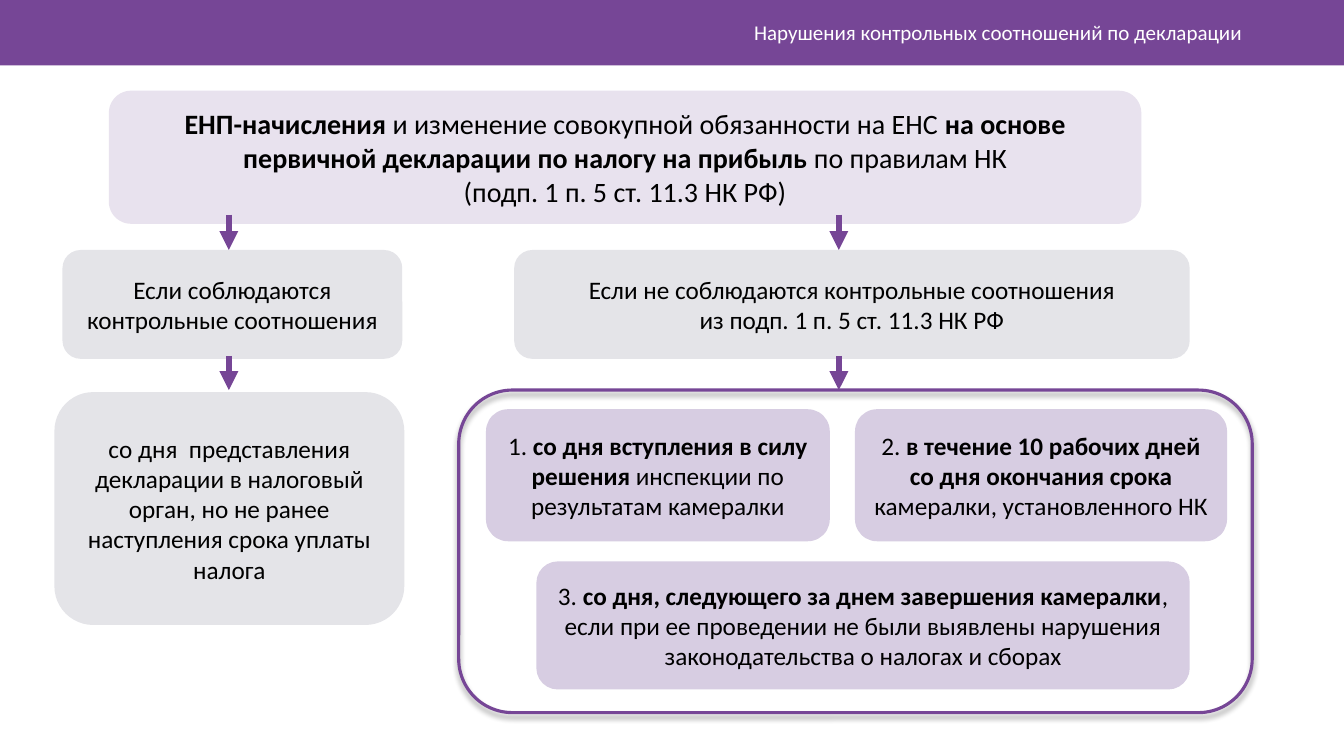
from pptx import Presentation, util as u
from pptx.dml.color import RGBColor
from pptx.enum import shapes as sh, text as tx
from pptx.oxml import parse_xml
from pptx.oxml.ns import nsdecls

THEME = {
    "font": "Calibri", "dark": "764696", "grey": "E4E4E8", "pale": "E8E2EE",
    "lilac": "D7CDE2", "ink": "000000", "white": "FFFFFF",
    "head": 15, "lead": 20, "body": 18, "arrow": 4.5, "edge": 2.25,
}
SIZE = (13.33, 7.5)
BAND = 0.65
TITLE = "Нарушения контрольных соотношений по декларации"

ROWS = {"lead": (0.9, 1.32), "case": (2.48, 1.08), "term": (3.89, 2.31),
        "frame": (3.87, 3.2), "pair": (4.06, 1.31), "last": (5.57, 1.27)}
COLS = {"lead": (1.08, 10.24), "yes": (0.62, 3.37), "no": (5.1, 6.7),
        "term": (0.54, 3.47), "frame": (4.55, 7.87), "one": (4.82, 3.41),
        "two": (8.48, 3.69), "three": (5.32, 6.48)}

BOXES = [
    ("lead", "lead", "pale", "lead", [
        "*ЕНП-начисления* и изменение совокупной обязанности на ЕНС "
        "*на основе первичной декларации по налогу на прибыль *по правилам НК",
        "(подп. 1 п. 5 ст. 11.3 НК РФ)"]),
    ("yes", "case", "grey", "body", ["Если соблюдаются контрольные соотношения"]),
    ("no", "case", "grey", "body", [
        "Если не соблюдаются контрольные соотношения",
        "из подп. 1 п. 5 ст. 11.3 НК РФ"]),
    ("term", "term", "grey", "body", [
        "со дня  представления декларации в налоговый орган, "
        "но не ранее наступления срока уплаты налога"]),
    ("one", "pair", "lilac", "body", [
        "1. *со дня вступления в силу решения* инспекции по результатам камералки"]),
    ("two", "pair", "lilac", "body", [
        "2. *в течение 10 рабочих дней со дня окончания срока *"
        "камералки, установленного НК"]),
    ("three", "last", "lilac", "body", [
        "3. *со дня, следующего за днем завершения камералки*, если при ее "
        "проведении не были выявлены нарушения законодательства о налогах и сборах"]),
]
STEMS = (2.27, 8.32)
DROPS = ((2.13, 2.48), (3.53, 3.87))


def tint(name):
    return RGBColor.from_string(THEME[name])


def style(font, size, color):
    font.name = THEME["font"]
    font.size = u.Pt(THEME[size])
    font.color.rgb = tint(color)


def add_box(slide, kind, area, fill=None):
    box = slide.shapes.add_shape(kind, *map(u.Inches, area))
    box.shadow.inherit = False
    if fill:
        box.fill.solid()
        box.fill.fore_color.rgb = tint(fill)
    else:
        box.fill.background()
    box.line.fill.background()
    return box


def place(col, row):
    (x, w), (y, h) = COLS[col], ROWS[row]
    return x, y, w, h


def write(box, size, lines):
    frame = box.text_frame
    frame.word_wrap = True
    frame.vertical_anchor = tx.MSO_ANCHOR.MIDDLE
    for i, line in enumerate(lines):
        para = frame.add_paragraph() if i else frame.paragraphs[0]
        para.alignment = tx.PP_ALIGN.CENTER
        for j, part in enumerate(line.split("*")):
            if part:
                run = para.add_run()
                run.text = part
                style(run.font, size, "ink")
                run.font.bold = j % 2 == 1


def add_title(slide):
    title = slide.shapes.title
    title.left, title.top, title.width, title.height = map(
        u.Inches, (3.54, 0.12, 8.88, 0.4))
    frame = title.text_frame
    frame.text = TITLE
    frame.word_wrap = True
    frame.auto_size = tx.MSO_AUTO_SIZE.NONE
    frame.vertical_anchor = tx.MSO_ANCHOR.MIDDLE
    para = frame.paragraphs[0]
    para.alignment = tx.PP_ALIGN.RIGHT
    style(para.runs[0].font, "head", "white")
    band = add_box(slide, sh.MSO_SHAPE.RECTANGLE, (0, 0, SIZE[0], BAND), "dark")
    title.element.addprevious(band.element)


def add_arrow(slide, x, top, end):
    line = slide.shapes.add_connector(
        sh.MSO_CONNECTOR.STRAIGHT, *map(u.Inches, (x, top, x, end)))
    line.line.color.rgb = tint("dark")
    line.line.width = u.Pt(THEME["arrow"])
    line.line._get_or_add_ln().append(
        parse_xml(f'<a:tailEnd {nsdecls("a")} type="triangle"/>'))
    line.element.spPr.append(parse_xml(f'<a:effectLst {nsdecls("a")}/>'))


def add_frame(slide):
    box = add_box(slide, sh.MSO_SHAPE.ROUNDED_RECTANGLE, place("frame", "frame"))
    box.line.color.rgb = tint("dark")
    box.line.width = u.Pt(THEME["edge"])
    glow = box.element.spPr.find("{*}effectLst")
    glow.append(parse_xml(
        f'<a:outerShdw {nsdecls("a")} blurRad="{u.Pt(4)}" dist="{u.Pt(3)}" '
        f'dir="5400000" rotWithShape="0"><a:srgbClr val="{THEME["ink"]}">'
        '<a:alpha val="40000"/></a:srgbClr></a:outerShdw>'))


def main():
    deck = Presentation()
    deck.slide_width, deck.slide_height = map(u.Inches, SIZE)
    slide = deck.slides.add_slide(deck.slide_layouts.get_by_name("Title Only"))
    add_title(slide)
    for col, row, fill, size, lines in BOXES:
        box = add_box(slide, sh.MSO_SHAPE.ROUNDED_RECTANGLE, place(col, row), fill)
        write(box, size, lines)
    add_frame(slide)
    for x in STEMS:
        for top, end in DROPS:
            add_arrow(slide, x, top, end)
    deck.save("out.pptx")


if __name__ == "__main__":
    main()
